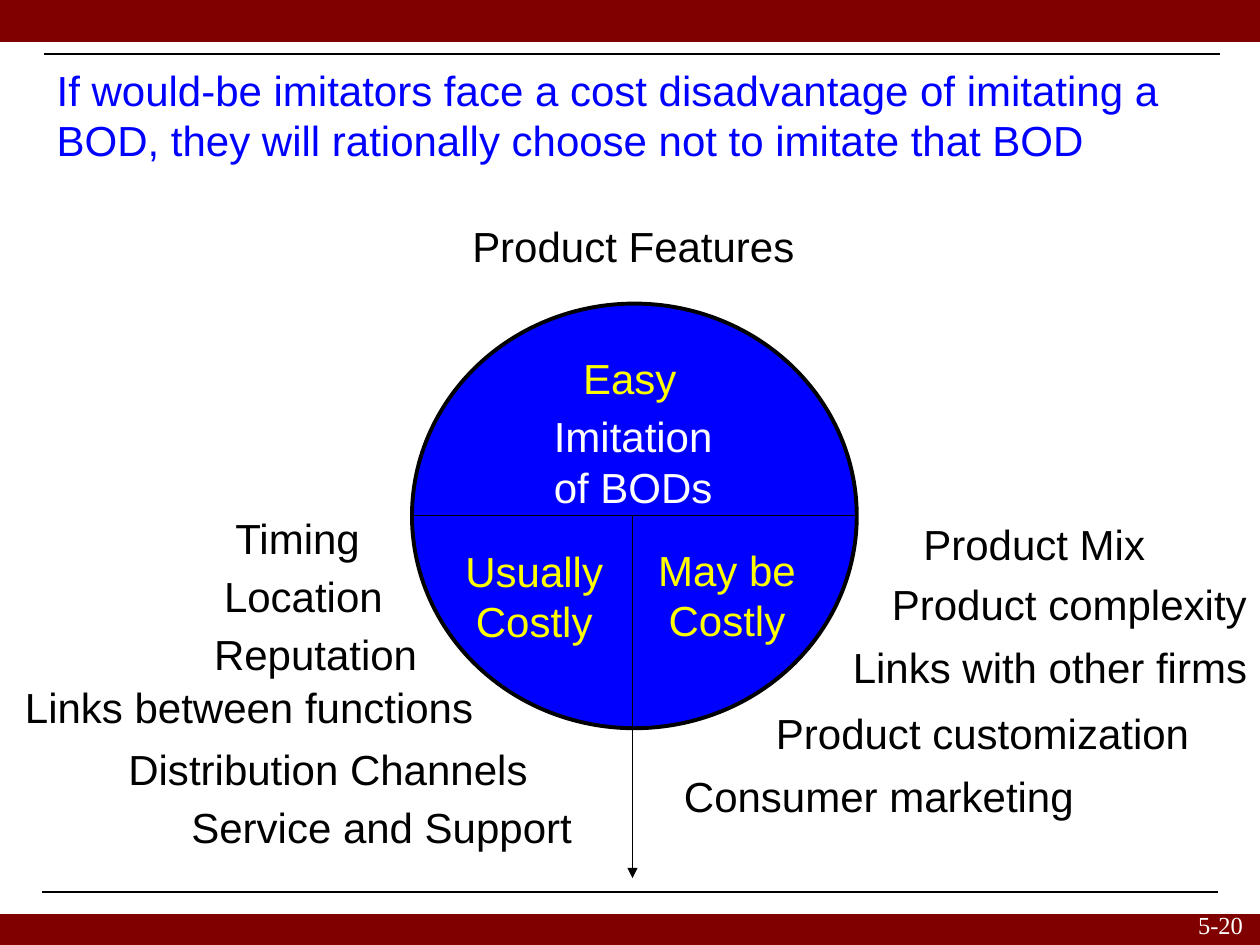
from pptx import Presentation
from pptx.dml.color import RGBColor as RGB
from pptx.enum.shapes import MSO_CONNECTOR as LINK, MSO_SHAPE as SHAPE
from pptx.enum.text import MSO_ANCHOR as ANCHOR, MSO_AUTO_SIZE as FIT, PP_ALIGN as ALIGN
from pptx.oxml.ns import qn
from pptx.util import Inches, Pt
from lxml.etree import SubElement as sub

BLACK = RGB(0x00, 0x00, 0x00)
WHITE = RGB(0xFF, 0xFF, 0xFF)
BLUE = RGB(0x00, 0x00, 0xFF)
YELLOW = RGB(0xFF, 0xFF, 0x00)
MAROON = RGB(0x80, 0x00, 0x00)

BODY = {"name": "Arial", "size": Pt(24)}
SMALL = {"name": "Times New Roman", "size": Pt(14)}
FRAME = {"auto_size": FIT.NONE, "vertical_anchor": ANCHOR.TOP}

ONE, TWO = 5, 9
LABELS = [
    ("Product Features", 36.5, 17, 27.6),
    ("Timing", 17.7, 40.2, 12),
    ("Location", 16.8, 44.8, 14.6),
    ("Reputation", 16, 49.4, 18.2),
    ("Links between functions", 1, 53.6, 37.6),
    ("Distribution Channels", 9.2, 58.5, 33.8),
    ("Service and Support", 14.2, 63.1, 32.2),
    ("Product Mix", 72.3, 40.7, 19.6),
    ("Product complexity", 69.8, 45.4, 30.2),
    ("Links with other firms", 66.7, 50.4, 33.3),
    ("Product customization", 60.6, 55.7, 34.8),
    ("Consumer marketing", 53.3, 60.7, 33),
]


class Deck:
    """Hold the style and current slide, on a grid of 100 columns by 75 rows."""

    def __init__(self):
        self.show = Presentation()
        self.show.slide_width, self.show.slide_height = self.grid(100, 75)
        self.slide = self.show.slides.add_slide(self.show.slide_layouts[5])

    def grid(self, *cells):
        return [Inches(cell / 10) for cell in cells]

    def fill(self, frame, text, color, style=BODY, align=ALIGN.LEFT, wrap=False):
        frame.text = text
        for key, value in {**FRAME, "word_wrap": wrap}.items():
            setattr(frame, key, value)
        for para in frame.paragraphs:
            para.alignment = align
            for key, value in style.items():
                setattr(para.font, key, value)
            para.font.color.rgb = color

    def title(self, text, *area):
        head = self.slide.shapes.title
        head.left, head.top, head.width, head.height = self.grid(*area)
        self.fill(head.text_frame, text, BLUE, wrap=True)

    def label(self, text, area, color=BLACK, **look):
        box = self.slide.shapes.add_textbox(*self.grid(*area))
        self.fill(box.text_frame, text, color, **look)

    def shape(self, kind, area, fill, edge, width):
        item = self.slide.shapes.add_shape(kind, *self.grid(*area))
        item.shadow.inherit = False
        item.fill.solid()
        item.fill.fore_color.rgb = fill
        item.line.color.rgb = edge
        item.line.width = Pt(width)

    def line(self, ends, width, arrow=False):
        item = self.slide.shapes.add_connector(LINK.STRAIGHT, *self.grid(*ends))
        item.line.color.rgb = BLACK
        item.line.width = Pt(width)
        props = item.element.spPr
        if arrow:
            sub(props.find(qn("a:ln")), qn("a:tailEnd"), type="triangle")
        sub(props, qn("a:effectLst"))


def main():
    deck = Deck()
    for top, high in ((0, 3.3), (72.6, 2.4)):
        deck.shape(SHAPE.RECTANGLE, (0, top, 100, high), MAROON, MAROON, 0.75)
    deck.line((3.5, 4.3, 96.8, 4.3), 1.5)
    deck.line((3.3, 70.8, 96.7, 70.8), 1.5)
    deck.label("5-20", (94.1, 71.7, 5.9, 3.3), WHITE, style=SMALL)
    deck.title("If would-be imitators face a cost disadvantage of imitating a BOD, "
               "they will rationally choose not to imitate that BOD", 3.5, 4.6, 91.2, 9.1)

    deck.shape(SHAPE.OVAL, (32.7, 24.1, 35.3, 33.7), BLUE, BLACK, 2.25)
    deck.line((32.7, 40.9, 68.1, 40.9), 0.75)
    deck.line((50.2, 40.9, 50.2, 69.7), 0.75, arrow=True)
    deck.label("Easy", (45.3, 27.5, 9.4, ONE), YELLOW)
    for text, left, top, wide, color in (
        ("Imitation\nof BODs", 42.7, 32.1, 15.1, WHITE),
        ("Usually\nCostly", 35.9, 42.8, 13, YELLOW),
        ("May be\nCostly", 51.2, 42.7, 13, YELLOW),
    ):
        deck.label(text, (left, top, wide, TWO), color, align=ALIGN.CENTER)
    for text, left, top, wide in LABELS:
        deck.label(text, (left, top, wide, ONE))
    deck.show.save("out.pptx")


if __name__ == "__main__":
    main()
